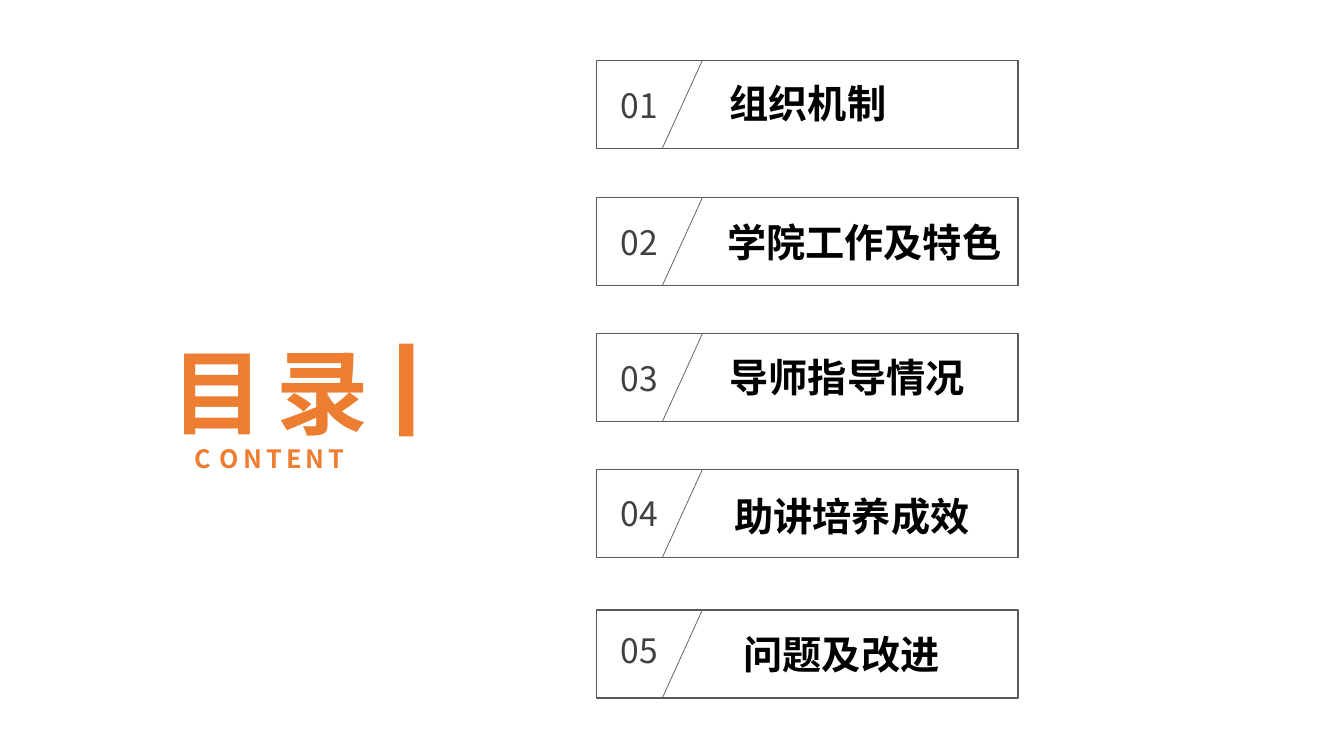
from dataclasses import dataclass

from lxml import etree
from pptx import Presentation
from pptx.dml.color import RGBColor
from pptx.enum.shapes import MSO_CONNECTOR, MSO_SHAPE
from pptx.enum.text import MSO_ANCHOR, MSO_AUTO_SIZE, PP_ALIGN
from pptx.oxml.ns import qn
from pptx.util import Cm, Pt

RECTANGLE = MSO_SHAPE.RECTANGLE
STRAIGHT = MSO_CONNECTOR.STRAIGHT
TOP = MSO_ANCHOR.TOP
GROW = MSO_AUTO_SIZE.SHAPE_TO_FIT_TEXT
LEFT, CENTER = PP_ALIGN.LEFT, PP_ALIGN.CENTER


@dataclass(frozen=True)
class Theme:
    font: str = "Noto Sans CJK SC"
    accent: RGBColor = RGBColor(0xED, 0x7D, 0x31)
    outline: RGBColor = RGBColor(0x59, 0x59, 0x59)
    number: RGBColor = RGBColor(0x40, 0x40, 0x40)
    label: RGBColor = RGBColor(0, 0, 0)
    title_size: int = 66
    title_gap_size: int = 12
    label_size: int = 28
    number_size: int = 24
    subtitle_size: int = 18
    subtitle_gap_size: int = 1
    tracking: int = 300


THEME = Theme()


def place(shape, left, top, width, height):
    """Set the frame of a shape, given in centimetres."""
    frame = {"left": left, "top": top, "width": width, "height": height}
    for side, length in frame.items():
        setattr(shape, side, Cm(length))


def write(shape, runs, color, bold=False, wrap=False, align=LEFT, tracking=0):
    """Fill a shape with one paragraph of (text, size) runs."""
    frame = shape.text_frame
    layout = {"word_wrap": wrap, "auto_size": GROW, "vertical_anchor": TOP}
    for attribute, value in layout.items():
        setattr(frame, attribute, value)
    paragraph = frame.paragraphs[0]
    paragraph.alignment = align
    for text, size in runs:
        run = paragraph.add_run()
        run.text = text
        style = {"name": THEME.font, "size": Pt(size), "bold": bold}
        for attribute, value in style.items():
            setattr(run.font, attribute, value)
        run.font.color.rgb = color
        properties = run._r.get_or_add_rPr()
        etree.SubElement(properties, qn("a:ea")).set("typeface", THEME.font)
        if tracking:
            properties.set("spc", str(tracking))


prs = Presentation()
prs.slide_width, prs.slide_height = Cm(33.87), Cm(19.05)
slide = prs.slides.add_slide(prs.slide_layouts[5])

# Heading
heading = {"color": THEME.accent, "bold": True, "align": CENTER, "tracking": THEME.tracking}
title = slide.shapes.title
place(title, 3.99, 8.31, 5.64, 3.07)
write(title, [("目", THEME.title_size), (" ", THEME.title_gap_size), ("录", THEME.title_size)], **heading)

subtitle = slide.shapes.add_textbox(Cm(4.62), Cm(11.05), Cm(4.34), Cm(1.02))
write(
    subtitle,
    [("C", THEME.subtitle_size), (" ", THEME.subtitle_gap_size), ("ONTENT", THEME.subtitle_size)],
    **heading,
)

bar = slide.shapes.add_shape(RECTANGLE, Cm(10.06), Cm(8.66), Cm(0.36), Cm(2.34))
bar.shadow.inherit = False
bar.fill.solid()
bar.fill.fore_color.rgb = THEME.accent
bar.line.fill.background()

# Chapters: text, box top, number top, label left, label top, label width
CHAPTERS = [
    ("组织机制", 1.52, 2.01, 18.14, 1.88, 6.78),
    ("学院工作及特色", 4.98, 5.46, 18.08, 5.38, 7.59),
    ("导师指导情况", 8.41, 8.89, 18.14, 8.79, 6.78),
    ("助讲培养成效", 11.83, 12.29, 18.26, 12.29, 6.78),
    ("问题及改进", 15.37, 15.75, 18.49, 15.75, 6.78),
]
BOX_LEFT, BOX_WIDTH, BOX_HEIGHT = 15.04, 10.62, 2.22

for position, chapter in enumerate(CHAPTERS, start=1):
    text, box_top, number_top, label_left, label_top, label_width = chapter
    entry = slide.shapes.add_group_shape().shapes

    box = entry.add_shape(RECTANGLE, Cm(BOX_LEFT), Cm(box_top), Cm(BOX_WIDTH), Cm(BOX_HEIGHT))
    box.shadow.inherit = False
    box.fill.background()

    slash = entry.add_connector(STRAIGHT, Cm(16.69), Cm(box_top + BOX_HEIGHT), Cm(17.7), Cm(box_top))
    etree.SubElement(slash._element.spPr, qn("a:effectLst"))

    for outlined, weight in ((box, 1), (slash, 0.5)):
        outlined.line.color.rgb = THEME.outline
        outlined.line.width = Pt(weight)

    number = entry.add_textbox(Cm(15.39), Cm(number_top), Cm(1.45), Cm(1.27))
    write(number, [(f"{position:02}", THEME.number_size)], THEME.number)

    label = entry.add_textbox(Cm(label_left), Cm(label_top), Cm(label_width), Cm(1.45))
    write(label, [(text, THEME.label_size)], THEME.label, bold=True, wrap=True)

prs.save("out.pptx")
